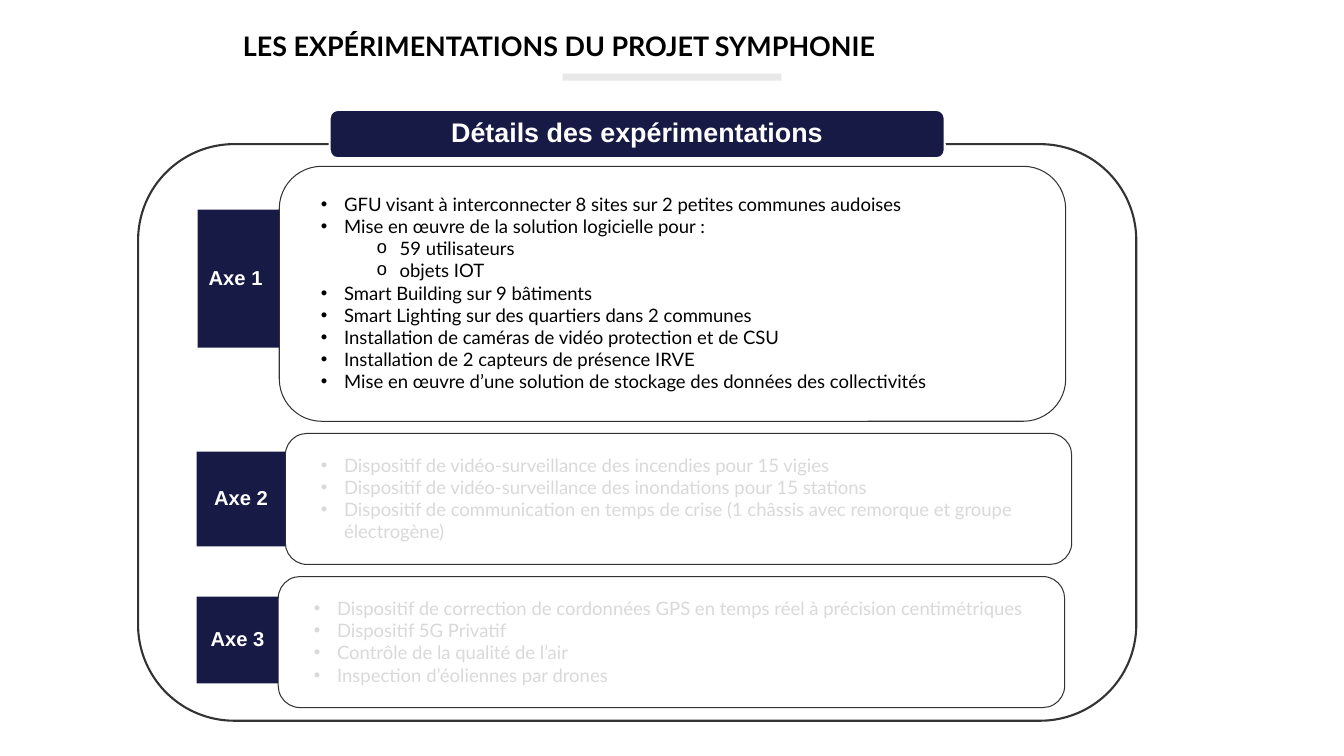
from dataclasses import dataclass

from lxml.etree import SubElement
from pptx import Presentation
from pptx.dml.color import RGBColor
from pptx.enum.shapes import MSO_SHAPE
from pptx.enum.text import MSO_ANCHOR, MSO_AUTO_SIZE, PP_ALIGN
from pptx.oxml.ns import qn
from pptx.util import Emu, Pt


@dataclass(frozen=True)
class Theme:
    navy: RGBColor = RGBColor(0x16, 0x1A, 0x44)
    white: RGBColor = RGBColor(0xFF, 0xFF, 0xFF)
    black: RGBColor = RGBColor(0, 0, 0)
    outline: RGBColor = RGBColor(0x33, 0x33, 0x33)
    muted: RGBColor = RGBColor(0xD9, 0xD9, 0xD9)
    rule: RGBColor = RGBColor(0xE8, 0xE8, 0xE8)
    heading_font: str = "Arial"
    body_font: str = "Lato"
    title_size: float = 19.2
    label_size: float = 14.4
    body_size: float = 13.2


THEME = Theme()
EMU_PER_PX = 9144
BULLET_INDENT = 23
SUB_MARGIN = 78

AXES = [
    ("Axe 1 ", (196, 208, 81, 137), (277, 165, 780, 253), THEME.black, [
        (0, "GFU visant à interconnecter 8 sites sur 2 petites communes audoises"),
        (0, "Mise en œuvre de la solution logicielle pour :"),
        (1, "59 utilisateurs"),
        (1, "objets IOT"),
        (0, "Smart Building sur 9 bâtiments"),
        (0, "Smart Lighting sur des quartiers dans 2 communes"),
        (0, "Installation de caméras de vidéo protection et de CSU"),
        (0, "Installation de 2 capteurs de présence IRVE"),
        (0, "Mise en œuvre d’une solution de stockage des données des collectivités"),
    ]),
    ("Axe 2", (195, 448, 88, 94), (283, 430, 780, 130), THEME.muted, [
        (0, "Dispositif de vidéo-surveillance des incendies pour 15 vigies"),
        (0, "Dispositif de vidéo-surveillance des inondations pour 15 stations"),
        (0, "Dispositif de communication en temps de crise "
            "(1 châssis avec remorque et groupe électrogène)"),
    ]),
    ("Axe 3", (195, 592, 81, 86), (276, 572, 780, 130), THEME.muted, [
        (0, "Dispositif de correction de cordonnées GPS en temps réel "
            "à précision centimétriques"),
        (0, "Dispositif 5G Privatif"),
        (0, "Contrôle de la qualité de l’air"),
        (0, "Inspection d’éoliennes par drones"),
    ]),
]


def px(length):
    return Emu(length * EMU_PER_PX)


def set_font(paragraph, name, size, color, bold=False):
    font = paragraph.font
    font.name, font.size, font.bold = name, Pt(size), bold
    font.color.rgb = color


def set_margins(frame, horizontal, vertical):
    frame.margin_left = frame.margin_right = px(horizontal)
    frame.margin_top = frame.margin_bottom = px(vertical)


def add_box(slide, kind, box, fill=None, line=None, line_width=0.75):
    shape = slide.shapes.add_shape(kind, *map(px, box))
    shape.shadow.inherit = False
    if fill is None:
        shape.fill.background()
    else:
        shape.fill.solid()
        shape.fill.fore_color.rgb = fill
    if line is None:
        shape.line.fill.background()
    else:
        shape.line.color.rgb = line
        shape.line.width = Pt(line_width)
    return shape


def write_label(shape, text, size):
    frame = shape.text_frame
    frame.word_wrap = True
    frame.vertical_anchor = MSO_ANCHOR.MIDDLE
    set_margins(frame, 7, 4)
    paragraph = frame.paragraphs[0]
    paragraph.text = text
    paragraph.alignment = PP_ALIGN.CENTER
    paragraph.line_spacing = 0.9
    set_font(paragraph, THEME.heading_font, size, THEME.white, bold=True)


def set_bullet(paragraph, level):
    paragraph.level = level
    properties = paragraph._p.get_or_add_pPr()
    margin = SUB_MARGIN if level else BULLET_INDENT
    properties.set("marL", str(px(margin)))
    properties.set("indent", str(px(-BULLET_INDENT)))
    typeface = "Courier New" if level else "Arial"
    SubElement(properties, qn("a:buFont"), typeface=typeface)
    SubElement(properties, qn("a:buChar"), char="o" if level else "•")


def add_title(slide, box):
    left, top, width, height = box
    add_box(slide, MSO_SHAPE.RECTANGLE, (left + 327, top + 58, 217, 7), THEME.rule)
    title = slide.shapes.title
    title.left, title.top, title.width, title.height = map(px, box)
    frame = title.text_frame
    frame.auto_size = MSO_AUTO_SIZE.NONE
    frame.vertical_anchor = MSO_ANCHOR.MIDDLE
    paragraph = frame.paragraphs[0]
    paragraph.text = "LES EXPÉRIMENTATIONS DU PROJET SYMPHONIE"
    paragraph.alignment = PP_ALIGN.LEFT
    paragraph.line_spacing = 0.9
    set_font(paragraph, THEME.body_font, THEME.title_size, THEME.black, bold=True)


def add_frame(slide, box):
    left, top, width, height = box
    rounded = MSO_SHAPE.ROUNDED_RECTANGLE
    add_box(slide, rounded, box, line=THEME.outline, line_width=1.5)
    banner = add_box(slide, rounded, (left + 190, top - 34, 610, 48),
                     THEME.navy, THEME.white, 1.5)
    write_label(banner, "Détails des expérimentations", THEME.title_size)


def add_axis(slide, label, label_box, panel_box, color, items):
    panel = add_box(slide, MSO_SHAPE.ROUNDED_RECTANGLE, panel_box, line=THEME.outline)
    frame = panel.text_frame
    frame.word_wrap = True
    frame.vertical_anchor = MSO_ANCHOR.TOP
    set_margins(frame, 29, 14)
    for index, (level, text) in enumerate(items):
        paragraph = frame.add_paragraph() if index else frame.paragraphs[0]
        paragraph.text = text
        paragraph.alignment = PP_ALIGN.LEFT
        set_bullet(paragraph, level)
        set_font(paragraph, THEME.body_font, THEME.body_size, color)
    tab = add_box(slide, MSO_SHAPE.RECTANGLE, label_box, THEME.navy)
    write_label(tab, label, THEME.label_size)


def main():
    presentation = Presentation()
    presentation.slide_width, presentation.slide_height = px(1333), px(750)
    slide = presentation.slides.add_slide(presentation.slide_layouts[5])
    add_title(slide, (231, 15, 871, 65))
    add_frame(slide, (137, 143, 990, 572))
    for axis in AXES:
        add_axis(slide, *axis)
    presentation.save("out.pptx")


if __name__ == "__main__":
    main()
